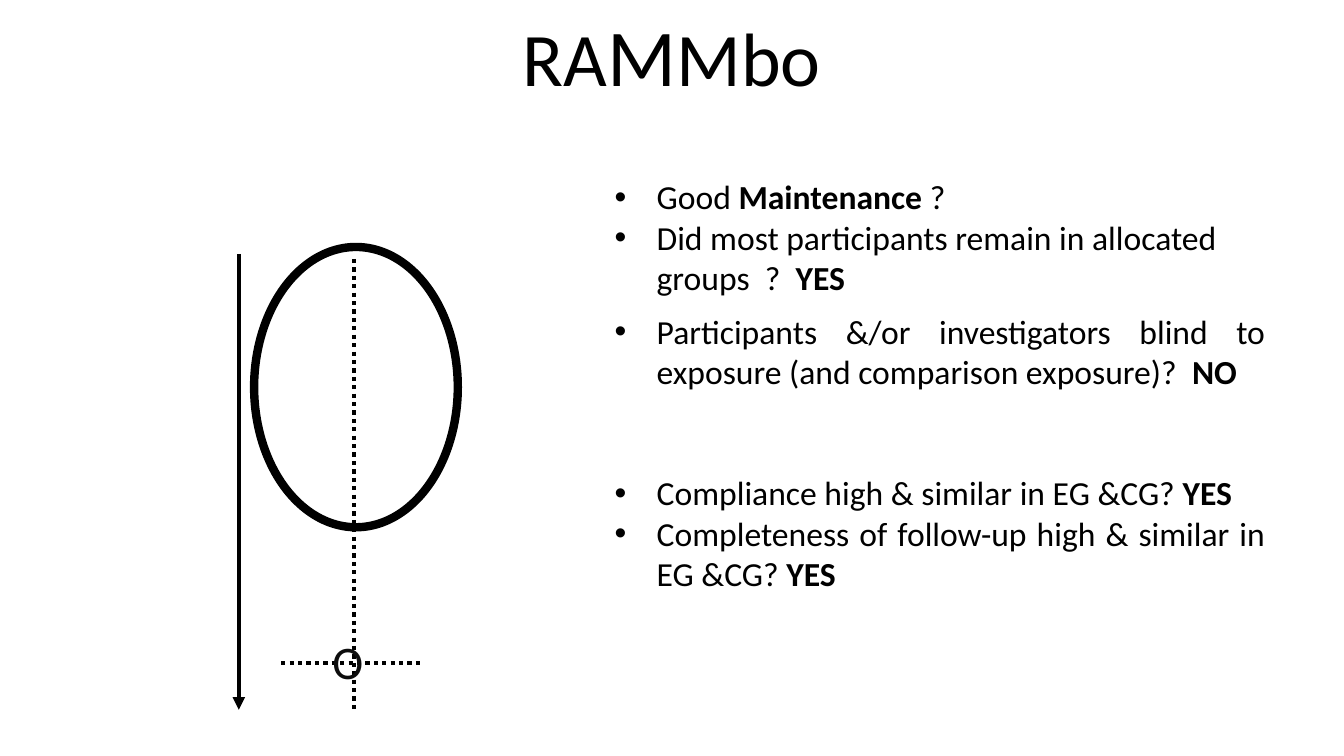
from dataclasses import dataclass

from lxml import etree
from pptx import Presentation
from pptx.dml.color import RGBColor
from pptx.enum.dml import MSO_LINE
from pptx.enum.shapes import MSO_CONNECTOR, MSO_SHAPE
from pptx.enum.text import MSO_ANCHOR, MSO_AUTO_SIZE, PP_ALIGN
from pptx.oxml.ns import qn
from pptx.util import Pt

STRAIGHT = MSO_CONNECTOR.STRAIGHT
OVAL = MSO_SHAPE.OVAL
DOTTED = MSO_LINE.ROUND_DOT
MIDDLE = MSO_ANCHOR.MIDDLE
NO_FIT = MSO_AUTO_SIZE.NONE
CENTER, LEFT, JUSTIFY = PP_ALIGN.CENTER, PP_ALIGN.LEFT, PP_ALIGN.JUSTIFY


@dataclass(frozen=True)
class Theme:
    font: str = "Calibri"
    black: RGBColor = RGBColor(0, 0, 0)
    soft_black: RGBColor = RGBColor(0x0D, 0x0D, 0x0D)
    title: float = 54
    title_large: float = 57.6
    outcome: float = 33.3
    body: float = 24


THEME = Theme()


def add_run(paragraph, text, size, color=THEME.black, bold=False):
    run = paragraph.add_run()
    run.text = text
    run.font.name = THEME.font
    run.font.size = Pt(size)
    run.font.bold = bold
    run.font.color.rgb = color


def set_bullet(paragraph, indent):
    """Give the paragraph a round bullet with a hanging indent in points."""
    properties = paragraph._p.get_or_add_pPr()
    properties.set("marL", str(Pt(indent)))
    properties.set("indent", str(-Pt(indent)))
    etree.SubElement(properties, qn("a:buFont"), typeface="Arial")
    etree.SubElement(properties, qn("a:buChar"), char="•")


presentation = Presentation()
presentation.slide_width, presentation.slide_height = Pt(960), Pt(540)
slide = presentation.slides.add_slide(presentation.slide_layouts[5])
shapes = slide.shapes

# Title
title = shapes.title
title.left, title.top, title.width, title.height = Pt(76.3), Pt(0), Pt(807), Pt(86.4)
heading = title.text_frame
heading.auto_size = NO_FIT
heading.vertical_anchor = MIDDLE
heading.paragraphs[0].alignment = CENTER
heading.paragraphs[0].line_spacing = 0.9
for text, size in [("RA", THEME.title), ("M", THEME.title_large), ("Mbo", THEME.title)]:
    add_run(heading.paragraphs[0], text, size)

# Study diagram: participants, time arrow and outcome cross
participants = shapes.add_shape(OVAL, Pt(181.5), Pt(176.4), Pt(145.5), Pt(200.2))
participants.shadow.inherit = False
participants.fill.background()
participants.line.color.rgb = THEME.black
participants.line.width = Pt(6)

FOLLOW_UP_END = 507
diagram_lines = [
    (170.6, 181.4, 170.6, FOLLOW_UP_END, True),
    (252.7, 185, 252.7, FOLLOW_UP_END, False),
    (200.9, 473.8, 300.2, 473.8, False),
]
for x1, y1, x2, y2, is_time_arrow in diagram_lines:
    axis = shapes.add_connector(STRAIGHT, Pt(x1), Pt(y1), Pt(x2), Pt(y2))
    axis.line.color.rgb = THEME.black
    axis.line.width = Pt(3)
    if is_time_arrow:
        etree.SubElement(axis.line._get_or_add_ln(), qn("a:tailEnd"), type="triangle")
    else:
        axis.line.dash_style = DOTTED
    etree.SubElement(axis._element.spPr, qn("a:effectLst"))

outcome = shapes.add_textbox(Pt(230.4), Pt(448.6), Pt(37.4), Pt(48))
outcome.text_frame.word_wrap = False
add_run(outcome.text_frame.paragraphs[0], "O", THEME.outcome, THEME.soft_black)

# Appraisal questions: box, alignment, then (space before, runs as text and bold)
question_groups = [
    ((432, 122.4, 446.4, 95), LEFT, [
        (0, [("Good ", False), ("Maintenance ", True), ("?", False)]),
        (0, [("Did most participants remain in allocated groups  ?  ", False),
             ("YES", True)]),
    ]),
    ((432, 218.2, 478.8, 211), JUSTIFY, [
        (0, [("Participants &/or investigators blind to exposure "
              "(and comparison exposure)?  ", False), ("NO", True)]),
        (58, [("Compliance high & similar in EG &CG? ", False), ("YES", True)]),
        (0, [("Completeness of follow-up high & similar in EG &CG? ", False),
             ("YES", True)]),
    ]),
]
for box, alignment, questions in question_groups:
    frame = shapes.add_textbox(*map(Pt, box)).text_frame
    frame.word_wrap = True
    for number, (space_before, runs) in enumerate(questions):
        question = frame.add_paragraph() if number else frame.paragraphs[0]
        question.alignment = alignment
        question.space_before = Pt(space_before)
        set_bullet(question, 30)
        for text, bold in runs:
            add_run(question, text, THEME.body, bold=bold)

presentation.save("out.pptx")
